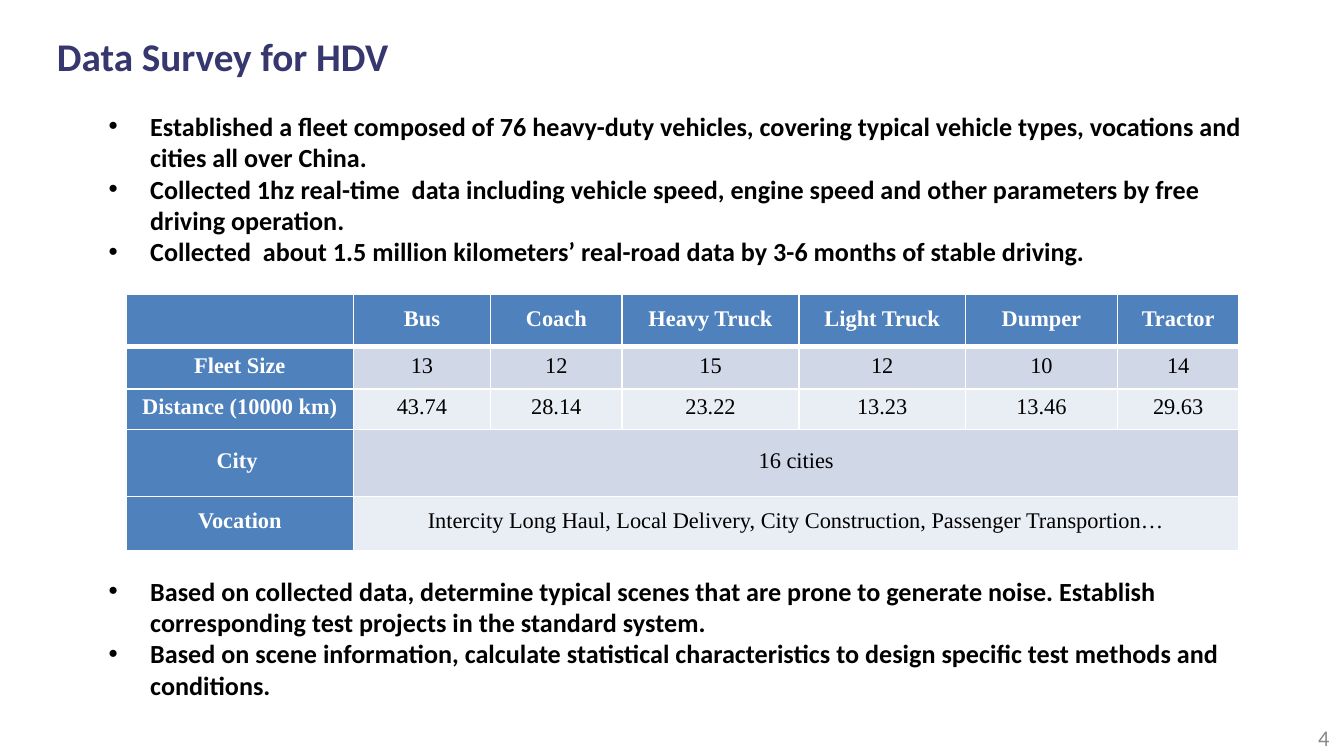
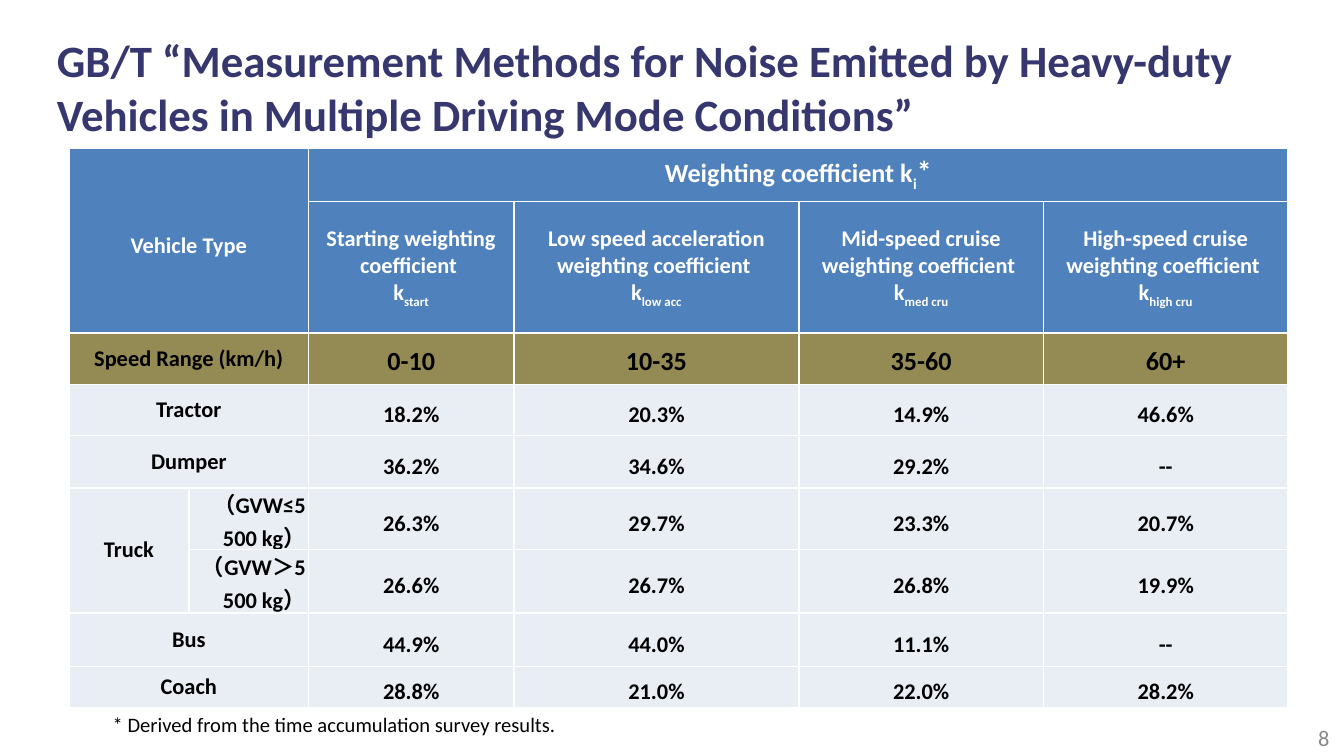
import lxml.etree
import pptx
import pptx.dml.color
import pptx.enum.text
import pptx.oxml.ns
import pptx.util

PX = 4572
NAVY, BLACK, WHITE, GRAY = "36376F", "000000", "FFFFFF", "898989"
BLUE, BAND, LIGHT, OLIVE = "4F81BD", "D0D8E8", "E9EDF4", "948A54"
LEFT, CENTER, RIGHT = (
    pptx.enum.text.PP_ALIGN.LEFT,
    pptx.enum.text.PP_ALIGN.CENTER,
    pptx.enum.text.PP_ALIGN.RIGHT,
)
MIDDLE = pptx.enum.text.MSO_ANCHOR.MIDDLE
BODY = {"font": "Calibri", "size": 14, "color": BLACK, "bold": True}
SUBSCRIPT = {"baseline": -25000}

SURVEY_TITLE = "Data Survey for HDV"
SURVEY_POINTS = [
    "Established a fleet composed of 76 heavy-duty vehicles, covering typical vehicle types, "
    "vocations and cities all over China.",
    "Collected 1hz real-time  data including vehicle speed, engine speed and other parameters "
    "by free driving operation.",
    "Collected  about 1.5 million kilometers’ real-road data by 3-6 months of stable driving.",
]
USE_POINTS = [
    "Based on collected data, determine typical scenes that are prone to generate noise. "
    "Establish corresponding test projects in the standard system.",
    "Based on scene information, calculate statistical characteristics to design specific "
    "test methods and conditions.",
]
FLEET_COLUMNS = [338, 204, 196, 263, 248, 226, 181]
FLEET_HEIGHTS = [78, 63, 60, 100, 80]
FLEET_ROWS = [
    ["", "Bus", "Coach", "Heavy Truck", "Light Truck", "Dumper", "Tractor"],
    ["Fleet Size", "13", "12", "15", "12", "10", "14"],
    ["Distance (10000 km)", "43.74", "28.14", "23.22", "13.23", "13.46", "29.63"],
    ["City ", "16 cities"],
    ["Vocation", "Intercity Long Haul, Local Delivery, City Construction, "
                 "Passenger Transportion…"],
]
FLEET_MERGES = [(3, 1, 3, 6), (4, 1, 4, 6)]

METHOD_TITLE = (
    "GB/T “Measurement Methods for Noise Emitted by Heavy-duty Vehicles "
    "in Multiple Driving Mode Conditions”"
)
FOOTNOTE = "* Derived from the time accumulation survey results."
MODES = [
    ("Starting", "start"),
    ("Low speed acceleration", "low acc"),
    ("Mid-speed cruise", "med cru"),
    ("High-speed cruise", "high cru"),
]
COEFFICIENT_TITLE = [[
    ("Weighting coefficient k", {"size": 14}),
    ("i", {"size": 14, **SUBSCRIPT}),
    ("*", {"size": 16}),
]]
MODE_HEADINGS = [
    [[(f"{mode} weighting coefficient ", {})], [("k", {}), (index, SUBSCRIPT)]]
    for mode, index in MODES
]
WEIGHT_COLUMNS = [178, 178, 306, 424, 364, 364]
WEIGHT_HEIGHTS = [80, 196, 76, 76, 78, 92, 94, 80, 62]
WEIGHT_ROWS = [
    ["Vehicle Type", None, COEFFICIENT_TITLE],
    [None, None, *MODE_HEADINGS],
    ["Speed Range (km/h)", None, "0-10", "10-35", "35-60", "60+"],
    ["Tractor", None, "18.2%", "20.3%", "14.9%", "46.6%"],
    ["Dumper", None, "36.2%", "34.6%", "29.2%", "--"],
    ["Truck", "（GVW≤5 500 kg）", "26.3%", "29.7%", "23.3%", "20.7%"],
    [None, "（GVW＞5 500 kg）", "26.6%", "26.7%", "26.8%", "19.9%"],
    ["Bus", None, "44.9%", "44.0%", "11.1%", "--"],
    ["Coach", None, "28.8%", "21.0%", "22.0%", "28.2%"],
]
WEIGHT_MERGES = [(0, 0, 1, 1), (0, 2, 0, 5), (5, 0, 6, 0)]
WEIGHT_MERGES += [(row, 0, row, 1) for row in (2, 3, 4, 7, 8)]


def px(length):
    return pptx.util.Emu(length * PX)


def rgb(value):
    return pptx.dml.color.RGBColor.from_string(value)


def add_element(parent, tag, **attributes):
    element = lxml.etree.SubElement(parent, pptx.oxml.ns.qn(tag))
    for name, value in attributes.items():
        element.set(name, str(value))
    return element


def add_run(paragraph, text, style):
    run = paragraph.add_run()
    run.text = text
    run.font.name = style["font"]
    run.font.size = pptx.util.Pt(style["size"])
    run.font.bold = style["bold"]
    run.font.color.rgb = rgb(style["color"])
    if "baseline" in style:
        run._r.get_or_add_rPr().set("baseline", str(style["baseline"]))


def add_bullet(paragraph):
    properties = paragraph._p.get_or_add_pPr()
    properties.set("marL", str(px(62)))
    properties.set("indent", str(px(-62)))
    add_element(properties, "a:buFont", typeface="Arial")
    add_element(properties, "a:buChar", char="•")


def write(frame, content, style, align=LEFT, spacing=None, bullets=False):
    paragraphs = [[(content, {})]] if isinstance(content, str) else content
    for index, runs in enumerate(paragraphs):
        paragraph = frame.add_paragraph() if index else frame.paragraphs[0]
        paragraph.alignment = align
        if spacing:
            paragraph.line_spacing = pptx.util.Pt(spacing)
        if bullets:
            add_bullet(paragraph)
        for text, changes in runs:
            add_run(paragraph, text, {**style, **changes})


def add_text(slide, box, content, style, anchor=None, **options):
    frame = slide.shapes.add_textbox(*map(px, box)).text_frame
    frame.word_wrap = True
    if anchor:
        frame.vertical_anchor = anchor
    write(frame, content, style, **options)


def add_points(slide, box, points):
    add_text(slide, box, [[(point, {})] for point in points], BODY, bullets=True)


def add_borders(cell, bottom):
    properties = cell._tc.get_or_add_tcPr()
    for side, width in (("L", 1), ("R", 1), ("T", 1), ("B", bottom)):
        line = add_element(properties, f"a:ln{side}", w=pptx.util.Pt(width))
        add_element(add_element(line, "a:solidFill"), "a:srgbClr", val=WHITE)


def add_table(slide, left, top, columns, heights, rows, merges, margins, look):
    box = (left, top, sum(columns), sum(heights))
    table = slide.shapes.add_table(len(heights), len(columns), *map(px, box)).table
    table.first_row = table.horz_banding = False
    for column, width in zip(table.columns, columns):
        column.width = px(width)
    for row, height in zip(table.rows, heights):
        row.height = px(height)
    for first_row, first_column, last_row, last_column in merges:
        table.cell(first_row, first_column).merge(table.cell(last_row, last_column))
    for r in range(len(heights)):
        for c in range(len(columns)):
            cell = table.cell(r, c)
            fill, style, options, bottom = look(r, c)
            cell.margin_left, cell.margin_top, cell.margin_right, cell.margin_bottom = map(
                px, margins
            )
            cell.vertical_anchor = MIDDLE
            add_borders(cell, bottom)
            cell.fill.solid()
            cell.fill.fore_color.rgb = rgb(fill)
            content = rows[r][c] if c < len(rows[r]) else None
            if content:
                write(cell.text_frame, content, style, **options)


def fleet_look(row, column):
    heading = row == 0 or column == 0
    fill = BLUE if heading else BAND if row % 2 else LIGHT
    style = {
        "font": "Times New Roman",
        "size": 12,
        "color": WHITE if heading else BLACK,
        "bold": heading,
    }
    return fill, style, {"align": CENTER}, 1 if row else 3


def weight_look(row, column):
    fill = BLUE if row < 2 else OLIVE if row == 2 else LIGHT
    value = column >= 2 and row != 1
    style = {
        **BODY,
        "size": 14 if row == 2 and value else 12,
        "color": WHITE if row < 2 else BLACK,
    }
    options = {
        "align": RIGHT if column == 1 else CENTER,
        "spacing": 20 if row == 0 or value else None,
    }
    return fill, style, options, 1


def add_slide(presentation, title, title_box, title_size, number):
    slide = presentation.slides.add_slide(presentation.slide_layouts[6])
    add_text(slide, title_box, title, {**BODY, "size": title_size, "color": NAVY})
    number_style = {**BODY, "size": 12, "color": GRAY, "bold": False}
    add_text(slide, (1922, 1071, 76, 54), number, number_style, anchor=MIDDLE, align=RIGHT)
    return slide


def main():
    presentation = pptx.Presentation()
    presentation.slide_width, presentation.slide_height = px(2000), px(1125)

    survey = add_slide(presentation, SURVEY_TITLE, (65, 38, 1000, 90), 21, "4")
    add_points(survey, (142, 154, 1780, 256), SURVEY_POINTS)
    add_table(survey, 188, 438, FLEET_COLUMNS, FLEET_HEIGHTS, FLEET_ROWS, FLEET_MERGES,
              (2, 2, 2, 8), fleet_look)
    add_points(survey, (142, 846, 1748, 208), USE_POINTS)

    method = add_slide(presentation, METHOD_TITLE, (65, 39, 1802, 182), 24, "8")
    add_table(method, 103, 220, WEIGHT_COLUMNS, WEIGHT_HEIGHTS, WEIGHT_ROWS, WEIGHT_MERGES,
              (4, 0, 4, 0), weight_look)
    add_text(method, (148, 1050, 1704, 58), FOOTNOTE, {**BODY, "size": 11, "bold": False})

    presentation.save("out.pptx")


if __name__ == "__main__":
    main()
